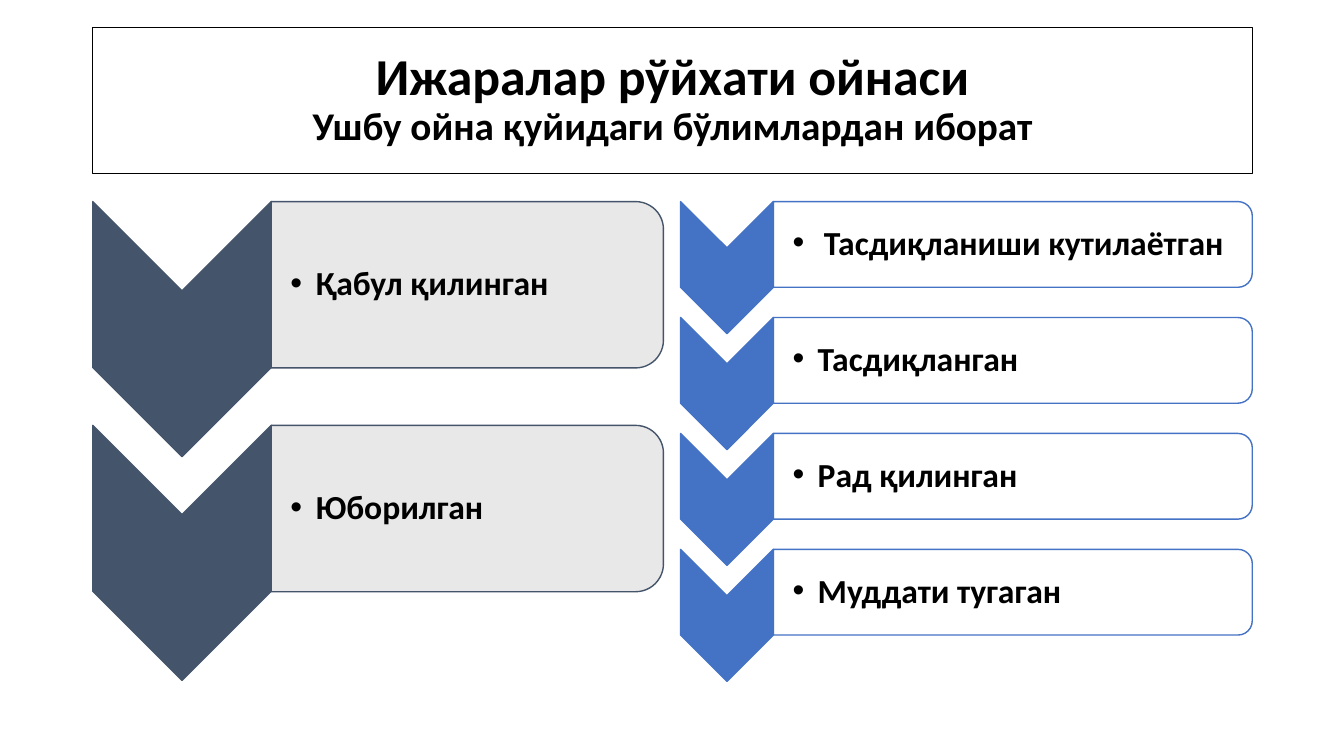
from dataclasses import dataclass

import pptx
import pptx.util
from lxml import etree
from pptx.dml.color import RGBColor
from pptx.enum.shapes import MSO_SHAPE
from pptx.enum.text import MSO_ANCHOR, MSO_AUTO_SIZE, PP_ALIGN
from pptx.oxml.ns import qn
from pptx.util import Inches


@dataclass(frozen=True)
class Theme:
    font: str = "Calibri"
    ink: str = "000000"
    paper: str = "FFFFFF"
    slate: str = "44546A"
    grey: str = "E7E6E6"
    blue: str = "4472C4"
    title_size: int = 37
    subtitle_size: int = 28
    item_size: int = 24


THEME = Theme()


def write(paragraph, text, size, bullet_indent=None, align=PP_ALIGN.LEFT):
    """Add a bold run, after a bullet if bullet_indent (inches) is given."""
    paragraph.alignment = align
    paragraph.line_spacing = 0.9
    if bullet_indent is not None:
        paragraph.level = 1
        properties = paragraph._p.get_or_add_pPr()
        properties.set("marL", str(Inches(bullet_indent)))
        properties.set("indent", str(-Inches(bullet_indent)))
        etree.SubElement(properties, qn("a:buFont"), typeface="Arial")
        etree.SubElement(properties, qn("a:buChar"), char="•")
    run = paragraph.add_run()
    run.text = text
    run.font.name = THEME.font
    run.font.size = pptx.util.Pt(size)
    run.font.bold = True
    run.font.color.rgb = RGBColor.from_string(THEME.ink)


def add_turned(shapes, preset, left, top, width, height, fill, line):
    """Add a shape turned by 90° that covers the given box as seen."""
    shape = shapes.add_shape(
        preset,
        Inches(left + (width - height) / 2), Inches(top + (height - width) / 2),
        Inches(height), Inches(width))
    shape.rotation = 90
    shape.shadow.inherit = False
    shape.fill.solid()
    shape.fill.fore_color.rgb = RGBColor.from_string(fill)
    shape.line.color.rgb = RGBColor.from_string(line)
    shape.line.width = pptx.util.Pt(1)
    return shape


deck = pptx.Presentation()
deck.slide_width = Inches(13.33)
deck.slide_height = Inches(7.5)
slide = deck.slides.add_slide(deck.slide_layouts[5])

title = slide.shapes.title
title.left, title.top = Inches(0.92), Inches(0.27)
title.width, title.height = Inches(11.5), Inches(1.45)
title.fill.solid()
title.fill.fore_color.rgb = RGBColor.from_string(THEME.paper)
title.line.color.rgb = RGBColor.from_string(THEME.ink)
title.line.width = pptx.util.Pt(0.75)
title.text_frame.auto_size = MSO_AUTO_SIZE.NONE
title.text_frame.vertical_anchor = MSO_ANCHOR.MIDDLE
heading = title.text_frame.paragraphs[0]
write(heading, "Ижаралар рўйхати ойнаси", THEME.title_size, align=PP_ALIGN.CENTER)
heading.add_line_break()
write(heading, "Ушбу ойна қуйидаги бўлимлардан иборат", THEME.subtitle_size,
      align=PP_ALIGN.CENTER)

# left, pitch, chevron size, bar size, text inset, colours, (item, indent)
columns = [
    (0.92, 2.22, (1.77, 2.53), (3.89, 1.65), 0.08, THEME.slate, THEME.grey,
     [("Қабул қилинган", 0.25), ("Юборилган", 0.25)]),
    (6.75, 1.15, (0.92, 1.31), (4.75, 0.85), 0.04, THEME.blue, THEME.paper,
     [("Тасдиқланиши кутилаётган", 0.31), ("Тасдиқланган", 0.25),
      ("Рад қилинган", 0.25), ("Муддати тугаган", 0.25)]),
]
first_row = 2.0

for left, pitch, chevron, bar, inset, accent, bar_fill, items in columns:
    bar_left = left + chevron[0]
    for row, (item, indent) in enumerate(items):
        top = first_row + row * pitch
        add_turned(slide.shapes, MSO_SHAPE.CHEVRON, left, top, *chevron,
                   accent, accent)
        panel = add_turned(slide.shapes, MSO_SHAPE.ROUND_2_SAME_RECTANGLE,
                           bar_left, top, *bar, bar_fill, accent)
        panel_color = panel.fill._xPr.find(qn("a:solidFill"))[0]
        etree.SubElement(panel_color, qn("a:alpha"), val="90000")

        label = slide.shapes.add_textbox(
            Inches(bar_left), Inches(top + inset),
            Inches(bar[0] - inset), Inches(bar[1] - 2 * inset)).text_frame
        label.word_wrap = True
        label.vertical_anchor = MSO_ANCHOR.MIDDLE
        label.margin_left = Inches(0.19)
        label.margin_top = label.margin_right = label.margin_bottom = Inches(0.02)
        write(label.paragraphs[0], item, THEME.item_size, bullet_indent=indent)

deck.save("out.pptx")
